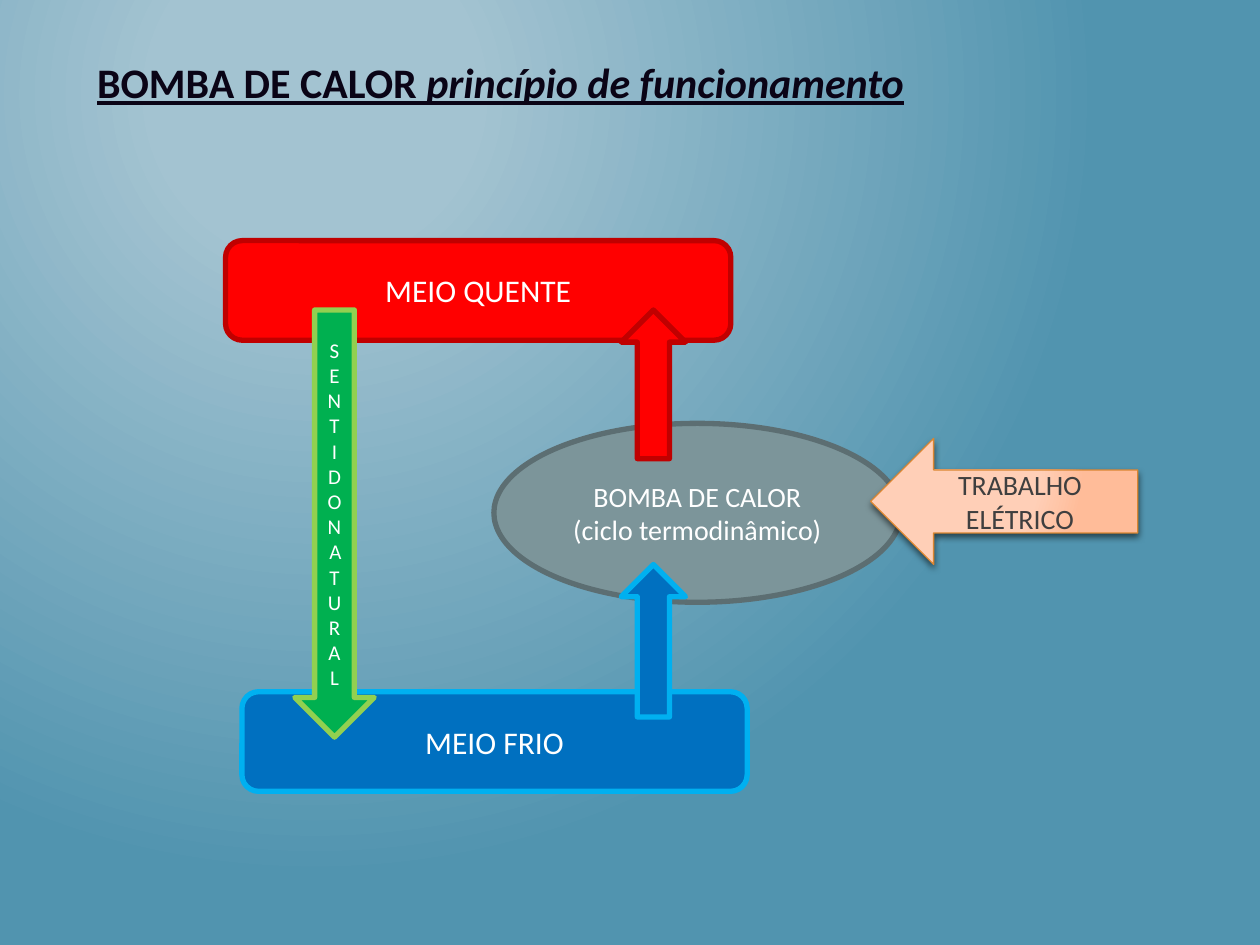
from dataclasses import dataclass
from lxml.etree import SubElement
from pptx import Presentation
from pptx.dml.color import RGBColor
from pptx.enum.shapes import MSO_SHAPE
from pptx.enum.text import MSO_ANCHOR, MSO_AUTO_SIZE, PP_ALIGN
from pptx.oxml.ns import qn
from pptx.util import Inches, Pt


@dataclass(frozen=True)
class Theme:
    font: str = "Calibri"
    ink: str = "0A0416"
    white: str = "FFFFFF"
    gray: str = "3F3F3F"
    hot: tuple = ("FF0000", "C00000")
    cold: tuple = ("0070C0", "00B0F0")
    flow: tuple = ("00B050", "92D050")
    pump: tuple = ("7C959A", "5C6E72")
    work: tuple = ("FFCFB7", "DB8631")
    glow: tuple = ((0, "FFCFB7"), (69, "FFCFB7"), (100, "FFBC99"))
    back: tuple = ((20, "A3C3D1"), (100, "5194AF"))
    shade: str = "000000"
    head: int = 24
    large: int = 18
    mid: int = 16
    small: int = 12
    thick: float = 3.03
    thin: float = 0.75


THEME = Theme()


def style(run, size, color, **more):
    look = {"name": THEME.font, "size": Pt(size), **more}
    for key, value in look.items():
        setattr(run.font, key, value)
    run.font.color.rgb = RGBColor.from_string(color)


def blend(props, stops, focus):
    solid = props.find(qn("a:solidFill"))
    grad = solid.makeelement(qn("a:gradFill"), {"rotWithShape": "1"})
    props.replace(solid, grad)
    items = SubElement(grad, qn("a:gsLst"))
    for place, color in stops:
        stop = SubElement(items, qn("a:gs"), pos=str(place * 1000))
        SubElement(stop, qn("a:srgbClr"), val=color)
    way = SubElement(grad, qn("a:path"), {"path": "circle"})
    rect = {side: str(part * 1000) for side, part in zip("ltrb", focus)}
    SubElement(way, qn("a:fillToRect"), rect)


def shadow(shape):
    holder = shape.element.spPr.find(qn("a:effectLst"))
    cast = SubElement(holder, qn("a:outerShdw"), blurRad=str(Pt(4)),
                      dist=str(Pt(2)), dir="5400000", rotWithShape="0")
    color = SubElement(cast, qn("a:srgbClr"), val=THEME.shade)
    SubElement(color, qn("a:alpha"), val="55000")


def block(group, kind, box, tone, lines=(), size=THEME.mid,
          ink=THEME.white, width=THEME.thick, turn=0):
    shape = group.shapes.add_shape(kind, *map(Inches, box))
    shape.rotation = turn
    shape.shadow.inherit = False
    shape.fill.solid()
    shape.fill.fore_color.rgb = RGBColor.from_string(tone[0])
    shape.line.color.rgb = RGBColor.from_string(tone[1])
    shape.line.width = Pt(width)
    frame = shape.text_frame
    frame.word_wrap = True
    frame.vertical_anchor = MSO_ANCHOR.MIDDLE
    for index, line in enumerate(lines):
        para = frame.add_paragraph() if index else frame.paragraphs[0]
        para.alignment = PP_ALIGN.CENTER
        run = para.add_run()
        run.text = line
        style(run, size, ink)
    return shape


def backdrop(slide):
    slide.background.fill.solid()
    blend(slide.element.find(".//" + qn("p:bgPr")), THEME.back, (50, 20, 100, 100))


def heading(slide, box):
    title = slide.shapes.title
    for key, value in zip(("left", "top", "width", "height"), box):
        setattr(title, key, Inches(value))
    frame = title.text_frame
    form = {"word_wrap": True, "vertical_anchor": MSO_ANCHOR.TOP,
            "auto_size": MSO_AUTO_SIZE.SHAPE_TO_FIT_TEXT}
    for key, value in form.items():
        setattr(frame, key, value)
    para = frame.paragraphs[0]
    para.alignment = PP_ALIGN.LEFT
    for text, slant in (("BOMBA DE CALOR ", False), ("princípio de funcionamento", True)):
        run = para.add_run()
        run.text = text
        style(run, THEME.head, THEME.ink, bold=True, underline=True, italic=slant)


def diagram(slide, left, top):
    group = slide.shapes.add_group_shape()

    def at(x, y, width, height):
        return left + x, top + y, width, height

    block(group, MSO_SHAPE.OVAL, at(2.13, 1.45, 3.23, 1.42), THEME.pump,
          ("BOMBA DE CALOR", "(ciclo termodinâmico)"))
    for x, y, tone, text in ((0, 0, THEME.hot, "MEIO QUENTE"),
                             (0.13, 3.58, THEME.cold, "MEIO FRIO")):
        block(group, MSO_SHAPE.ROUNDED_RECTANGLE, at(x, y, 4.01, 0.79),
              tone, (text,), THEME.large)
    for y, height, tone in ((0.55, 1.18, THEME.hot), (2.57, 1.21, THEME.cold)):
        block(group, MSO_SHAPE.DOWN_ARROW, at(3.14, y, 0.51, height), tone, turn=180)
    block(group, MSO_SHAPE.DOWN_ARROW, at(0.55, 0.55, 0.63, 3.39), THEME.flow,
          ("SENTIDO NATURAL",), THEME.small)
    work = block(group, MSO_SHAPE.LEFT_ARROW, at(5.12, 1.57, 2.12, 1), THEME.work,
                 ("TRABALHO ELÉTRICO",), ink=THEME.gray, width=THEME.thin)
    blend(work.element.spPr, THEME.glow, (50, 50, 100, 100))
    shadow(work)


def main():
    deck = Presentation()
    deck.slide_width, deck.slide_height = Inches(10), Inches(7.5)
    slide = deck.slides.add_slide(deck.slide_layouts[5])
    backdrop(slide)
    heading(slide, (0.67, 0.4, 8.9, 0.5))
    diagram(slide, 1.79, 1.91)
    deck.save("out.pptx")


if __name__ == "__main__":
    main()
